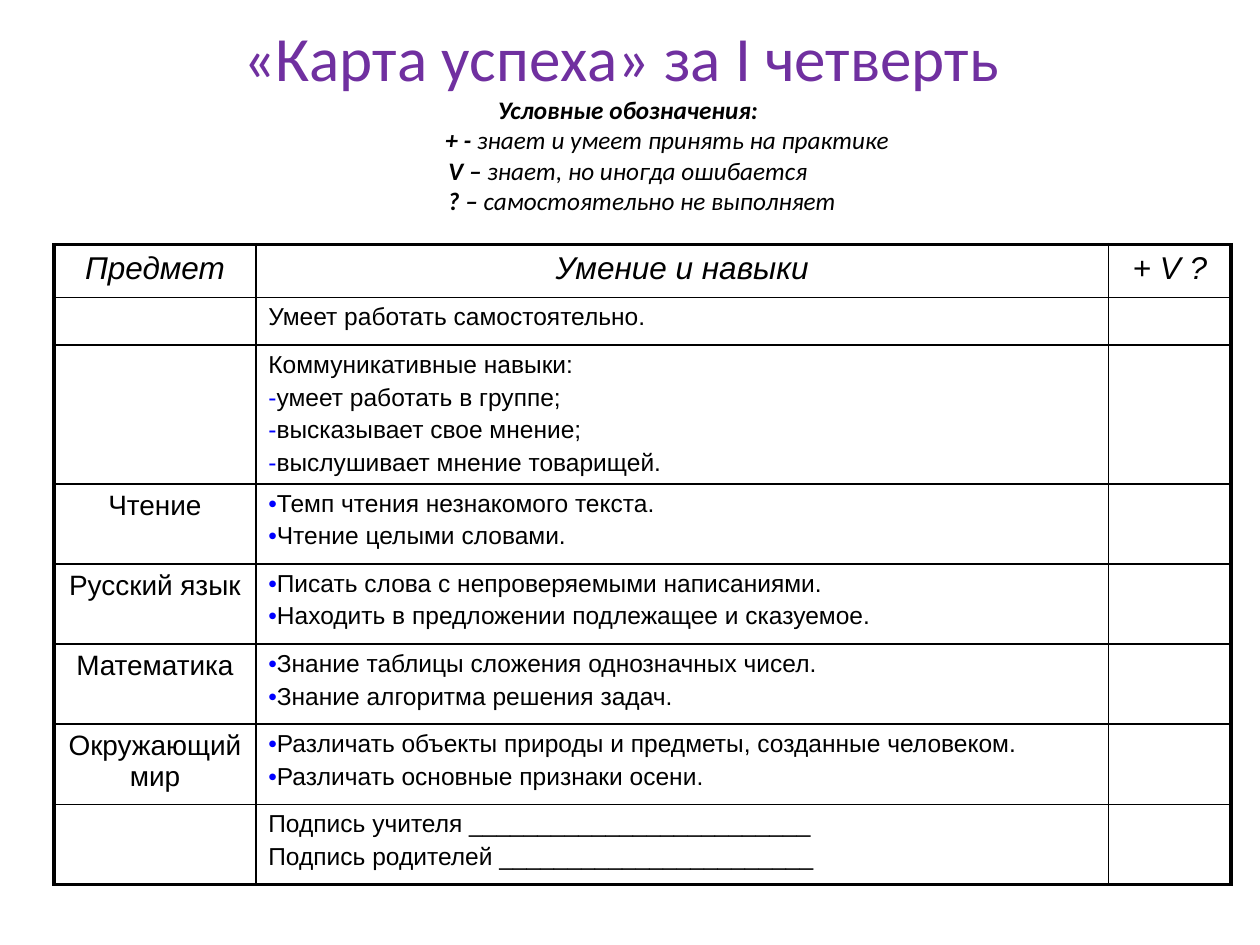
"""Builds a one-slide school progress card with a legend and a skills table."""
import pptx
import pptx.dml.color
import pptx.enum.text
import pptx.oxml
import pptx.oxml.ns
import pptx.util

CENTER = pptx.enum.text.PP_ALIGN.CENTER
LEFT = pptx.enum.text.PP_ALIGN.LEFT
NS = pptx.oxml.ns.nsdecls("a")
COLS = [1.6, 6.77, 0.97]
ROWS = [0.42, 0.38, 1.1] + [3.18 / 5] * 5
HEADER = ["Предмет", "Умение и навыки", "+ V ?"]
LEGEND = [
    ("Условные обозначения:", "", 0),
    ("+ - ", "знает и умеет принять на практике", 0.62),
    ("V – ", "знает, но иногда ошибается", 0),
    ("? – ", "самостоятельно не выполняет", 0.22),
]
SKILLS = [
    ("", "", ["Умеет работать самостоятельно."]),
    ("", "-", ["Коммуникативные навыки:", "умеет работать в группе;",
               "высказывает свое мнение;", "выслушивает мнение товарищей."]),
    ("Чтение", "•", ["Темп чтения незнакомого текста.", "Чтение целыми словами."]),
    ("Русский язык", "•", ["Писать слова с непроверяемыми написаниями.",
                           "Находить в предложении подлежащее и сказуемое."]),
    ("Математика", "•", ["Знание таблицы сложения однозначных чисел.",
                         "Знание алгоритма решения задач."]),
    ("Окружающий мир", "•", ["Различать объекты природы и предметы, созданные человеком.",
                             "Различать основные признаки осени."]),
    ("", "", ["Подпись учителя " + "_" * 25, "Подпись родителей " + "_" * 23]),
]


def rgb(color):
    """Turn a hex string into a colour."""
    return pptx.dml.color.RGBColor.from_string(color)


def add_xml(parent, xml):
    """Append a DrawingML element written as text with {ns} for its namespace."""
    parent.append(pptx.oxml.parse_xml(xml.format(ns=NS)))


def add_run(p, text, size, font, color="000000", bold=False, italic=False):
    """Add one formatted run to a paragraph."""
    r = p.add_run()
    r.text = text
    r.font.size = pptx.util.Pt(size)
    r.font.name = font
    r.font.color.rgb = rgb(color)
    r.font.bold = bold
    r.font.italic = italic


def center(p, left=0, right=0):
    """Centre a paragraph between its margins, given in inches."""
    p.alignment = CENTER
    pPr = p._p.get_or_add_pPr()
    pPr.set("marL", str(pptx.util.Inches(left)))
    pPr.set("marR", str(pptx.util.Inches(right)))


def add_title(s):
    """Fill the title placeholder with the heading and the legend."""
    sp = s.shapes.title
    sp.left, sp.top, sp.width, sp.height = map(pptx.util.Inches, (0.33, 0.16, 9.31, 1.54))
    tf = sp.text_frame
    tf.word_wrap = True
    tf.auto_size = pptx.enum.text.MSO_AUTO_SIZE.NONE
    tf.vertical_anchor = pptx.enum.text.MSO_ANCHOR.MIDDLE
    center(tf.paragraphs[0], right=0.11)
    add_run(tf.paragraphs[0], "«Карта успеха» за I четверть", 36, "Calibri", "7030A0")
    for mark, meaning, indent in LEGEND:
        p = tf.add_paragraph()
        center(p, left=indent)
        add_run(p, mark, 14.4, "Calibri", bold=True, italic=True)
        if meaning:
            add_run(p, meaning, 14.4, "Calibri", italic=True)


def add_line(tf, i, text, size, align=LEFT, bullet="", italic=False):
    """Write line i of a cell, with an optional blue bullet."""
    p = tf.paragraphs[0] if i == 0 else tf.add_paragraph()
    p.alignment = align
    pPr = p._p.get_or_add_pPr()
    add_xml(pPr, '<a:spcBef {ns}><a:spcPct val="20000"/></a:spcBef>')
    if bullet:
        pPr.set("marL", "0")
        pPr.set("indent", "0")
        add_xml(pPr, '<a:buClr {ns}><a:srgbClr val="0000FF"/></a:buClr>')
        add_xml(pPr, '<a:buFont {ns} typeface="Arial"/>')
        add_xml(pPr, '<a:buChar {ns} char="' + bullet + '"/>')
    if text:
        add_run(p, text, size, "Arial", italic=italic)
    add_xml(p._p, f'<a:endParaRPr {{ns}} sz="{size * 100}"><a:latin typeface="Arial"/></a:endParaRPr>')


def set_borders(cell, row, col):
    """Draw thin black cell borders, thick along the table's outer edge."""
    outer = {"lnL": col == 0, "lnR": col == len(COLS) - 1,
             "lnT": row == 0, "lnB": row == len(ROWS) - 1}
    for side, thick in outer.items():
        width = pptx.util.Pt(2.25 if thick else 1)
        add_xml(cell._tc.get_or_add_tcPr(), f'<a:{side} {{ns}} w="{width}"><a:solidFill>'
                f'<a:srgbClr val="000000"/></a:solidFill></a:{side}>')


def add_skills_table(s):
    """Add the table of subjects, skills and marks."""
    box = map(pptx.util.Inches, (0.43, 1.94, sum(COLS), sum(ROWS)))
    table = s.shapes.add_table(len(ROWS), len(COLS), *box).table
    table.first_row = table.horz_banding = False
    for col, width in zip(table.columns, COLS):
        col.width = pptx.util.Inches(width)
    for row, height in zip(table.rows, ROWS):
        row.height = pptx.util.Inches(height)
    for r in range(len(ROWS)):
        for c in range(len(COLS)):
            set_borders(table.cell(r, c), r, c)
            table.cell(r, c).fill.background()
    for c, text in enumerate(HEADER):
        add_line(table.cell(0, c).text_frame, 0, text, 18, CENTER, italic=True)
    for r, (subject, bullet, lines) in enumerate(SKILLS, 1):
        add_line(table.cell(r, 0).text_frame, 0, subject, 16, CENTER)
        add_line(table.cell(r, 2).text_frame, 0, "", 16)
        for i, text in enumerate(lines):
            mark = "" if text.endswith(":") else bullet
            add_line(table.cell(r, 1).text_frame, i, text, 14, bullet=mark)


def main():
    """Build and save the slide."""
    prs = pptx.Presentation()
    prs.slide_width = pptx.util.Inches(10)
    prs.slide_height = pptx.util.Inches(7.5)
    s = prs.slides.add_slide(prs.slide_layouts[5])
    add_title(s)
    add_skills_table(s)
    prs.save("out.pptx")


if __name__ == "__main__":
    main()
